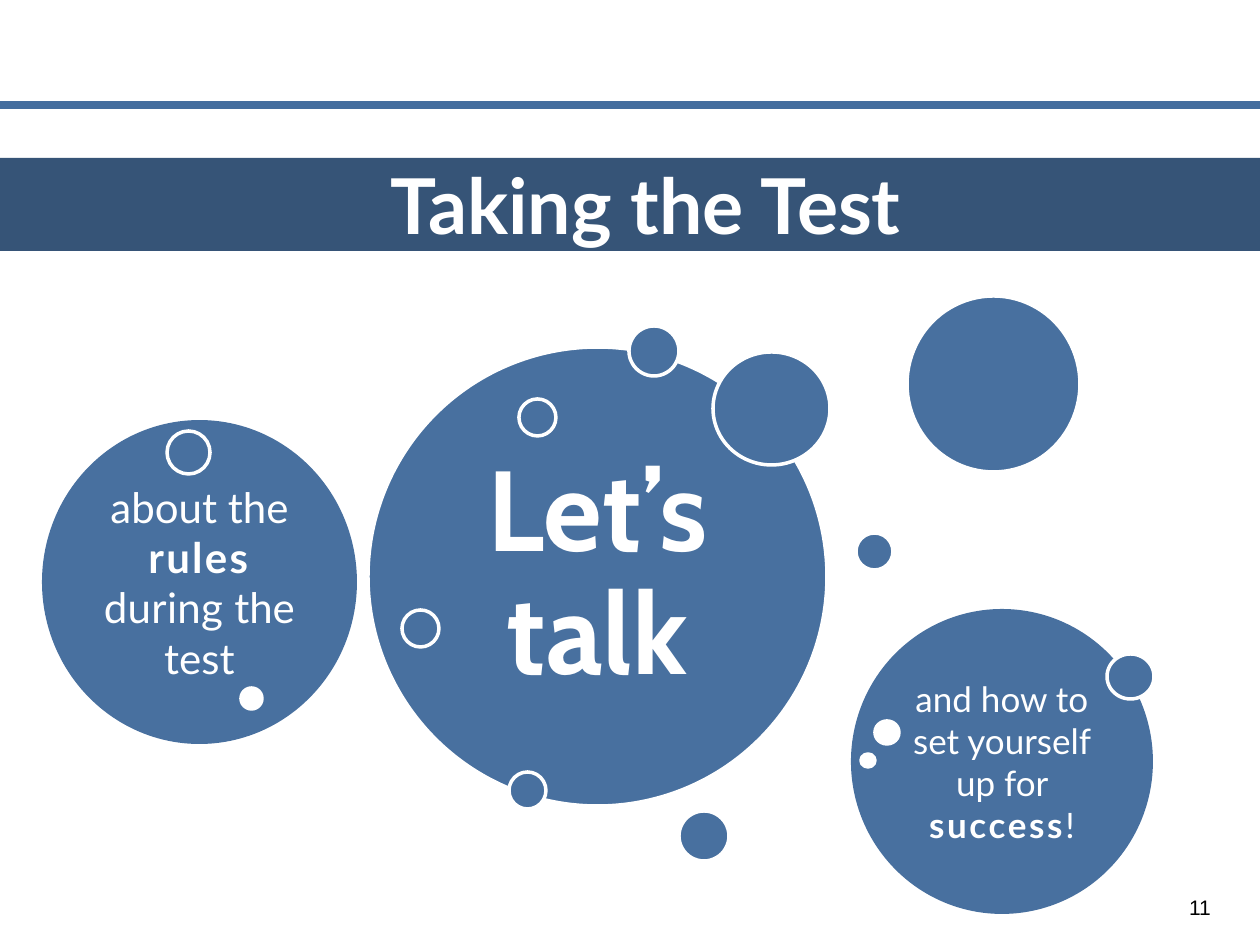
from pptx import Presentation
from pptx import util as u
from pptx.dml.color import RGBColor
from pptx.enum import shapes, text
from pptx.oxml.ns import qn
from lxml import etree

PX = 914400 / 126
BLUE = RGBColor(0x48, 0x70, 0x9F)
RULE = RGBColor(0x44, 0x6D, 0x9E)
NAVY = RGBColor(0x36, 0x54, 0x77)
WHITE = RGBColor(0xFF, 0xFF, 0xFF)
BLACK = RGBColor(0, 0, 0)
OVAL = shapes.MSO_SHAPE.OVAL
NODE = shapes.MSO_SHAPE.FLOWCHART_CONNECTOR


def px(*vals):
    return [u.Emu(round(v * PX)) for v in vals]


def add_shape(s, kind, box, fill, outlined=False):
    sp = s.shapes.add_shape(kind, *px(*box))
    sp.shadow.inherit = False
    sp.fill.solid()
    sp.fill.fore_color.rgb = fill
    if outlined:
        sp.line.color.rgb = WHITE
        sp.line.width = u.Pt(2)
    else:
        sp.line.fill.background()
    return sp


def write(sp, runs, size, font, color, anchor, inset):
    tf = sp.text_frame
    tf.word_wrap = True
    tf.vertical_anchor = anchor
    side, top = px(*inset)
    tf.margin_left = tf.margin_right = side
    tf.margin_top = tf.margin_bottom = top
    p = tf.paragraphs[0]
    p.alignment = text.PP_ALIGN.CENTER
    for words, bold, spacing in runs:
        r = p.add_run()
        r.text = words
        r.font.size = u.Pt(size)
        r.font.name = font
        r.font.bold = bold
        r.font.color.rgb = color
        if spacing:
            r.font._element.set("spc", str(spacing))
    return p


def add_rule(s, x, y, w):
    x1, y1, x2 = px(x, y, x + w)
    ln = s.shapes.add_connector(shapes.MSO_CONNECTOR.STRAIGHT, x1, y1, x2, y1)
    ln.line.color.rgb = RULE
    ln.line.width = u.Pt(4.5)
    etree.SubElement(ln._element.spPr, qn("a:effectLst"))


def add_title(s, box):
    sp = add_shape(s, shapes.MSO_SHAPE.RECTANGLE, box, NAVY)
    p = write(sp, [("Taking the Test", True, 0)], 44, "Lato", WHITE,
              text.MSO_ANCHOR.TOP, (0, 0))
    p._p.get_or_add_pPr().set("marL", str(u.Inches(0.25)))


def add_bubble(s, kind, box, runs, size, font, dots, inset=(13, 6), outlined=False):
    sp = add_shape(s, kind, box, BLUE, outlined)
    p = write(sp, runs, size, font, WHITE, text.MSO_ANCHOR.MIDDLE, inset)
    for x, y, w, h, fill in dots:
        add_shape(s, kind, (box[0] + x, box[1] + y, w, h), fill, True)
    return p


def add_number(s, box):
    tb = s.shapes.add_textbox(*px(*box))
    write(tb, [("11", False, 0)], 12, "Arial", BLACK,
          text.MSO_ANCHOR.MIDDLE, (13, 6))


def main():
    prs = Presentation()
    prs.slide_width, prs.slide_height = u.Inches(10), u.Inches(7.5)
    s = prs.slides.add_slide(prs.slide_layouts[6])

    add_rule(s, 0, 105, 1260)
    p = add_bubble(s, OVAL, (368, 347, 459, 459), [("Let’s talk", True, 0)], 65, "Cabin",
                   [(x, y, d, d, BLUE) for x, y, d in (
                       (261, -21, 50), (141, 425, 37), (488, 186, 37),
                       (311, 464, 50), (151, 52, 37), (34, 263, 37))],
                   (34, 34), True)
    p.line_spacing = 0.9
    add_number(s, (1171, 882, 58, 50))
    add_title(s, (0, 158, 1260, 93))
    add_bubble(s, NODE, (42, 420, 315, 324),
               [("about the ", False, 0), ("rules ", True, 130),
                ("during", False, 20), (" the test", False, 0)], 24, "Lato",
               [(125, 11, 43, 43, BLUE), (199, 268, 21, 21, WHITE)])
    add_bubble(s, NODE, (851, 609, 302, 305),
               [("and how to set yourself up for ", False, 0),
                ("success", True, 150), ("!", False, 0)], 20, "Lato",
               [(256, 45, 47, 45, BLUE), (24, 112, 24, 23, WHITE),
                (10, 145, 14, 13, WHITE)])
    for box in ((713, 352, 117, 113), (907, 296, 173, 176)):
        add_shape(s, NODE, box, BLUE, True)

    prs.save("out.pptx")


if __name__ == "__main__":
    main()
